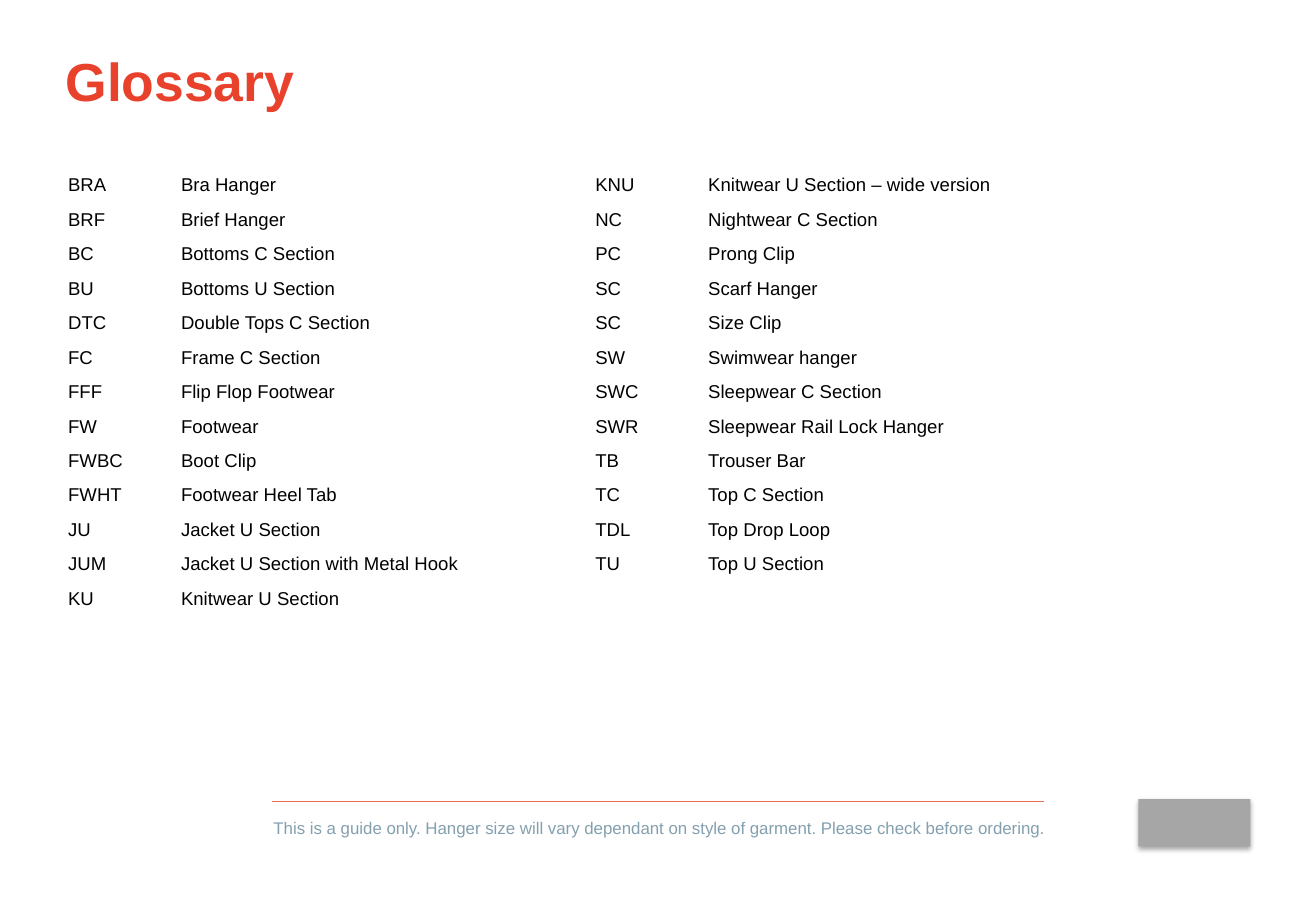
from dataclasses import dataclass

from lxml import etree
from pptx import Presentation
from pptx.dml.color import RGBColor
from pptx.enum.shapes import MSO_CONNECTOR, MSO_SHAPE
from pptx.enum.text import MSO_ANCHOR, PP_ALIGN
from pptx.oxml.ns import qn
from pptx.slide import Slide
from pptx.text.text import TextFrame, _Paragraph
from pptx.util import Cm, Pt

RECTANGLE = MSO_SHAPE.RECTANGLE
STRAIGHT = MSO_CONNECTOR.STRAIGHT
LEFT, CENTER = PP_ALIGN.LEFT, PP_ALIGN.CENTER
TOP, BOTTOM = MSO_ANCHOR.TOP, MSO_ANCHOR.BOTTOM

FONT = "Arial"
COLORS = {
    "title": "E8412C",
    "rule": "EC6C5A",
    "note": "84A0AF",
    "text": "000000",
    "block": "A6A6A6",
    "shadow": "000000",
}

TABLE_TOP = 3.53
ROW_HEIGHT = 0.69
ROW_COUNT = 13
COLUMN_WIDTHS = (2.36, 8.15)


@dataclass(frozen=True)
class GlossaryTable:
    left: float
    entries: tuple[tuple[str, str], ...]


GLOSSARY = (
    GlossaryTable(1.17, (
        ("BRA", "Bra Hanger"),
        ("BRF", "Brief Hanger"),
        ("BC", "Bottoms C Section"),
        ("BU", "Bottoms U Section"),
        ("DTC", "Double Tops C Section"),
        ("FC", "Frame C Section"),
        ("FFF", "Flip Flop Footwear"),
        ("FW", "Footwear"),
        ("FWBC", "Boot Clip"),
        ("FWHT", "Footwear Heel Tab"),
        ("JU", "Jacket U Section"),
        ("JUM", "Jacket U Section with Metal Hook"),
        ("KU", "Knitwear U Section"),
    )),
    GlossaryTable(12.19, (
        ("KNU", "Knitwear U Section – wide version"),
        ("NC", "Nightwear C Section"),
        ("PC", "Prong Clip"),
        ("SC", "Scarf Hanger"),
        ("SC", "Size Clip"),
        ("SW", "Swimwear hanger"),
        ("SWC", "Sleepwear C Section"),
        ("SWR", "Sleepwear Rail Lock Hanger"),
        ("TB", "Trouser Bar"),
        ("TC", "Top C Section"),
        ("TDL", "Top Drop Loop"),
        ("TU", "Top U Section"),
    )),
)


def format_runs(para: _Paragraph, size: float, color: str, bold: bool = False) -> None:
    for span in para.runs:
        span.font.name = FONT
        span.font.size = Pt(size)
        span.font.bold = bold
        span.font.color.rgb = RGBColor.from_string(COLORS[color])


def set_line_box(frame: TextFrame, text: str, anchor: MSO_ANCHOR,
                 align: PP_ALIGN) -> _Paragraph:
    """Fill a frame that has no side margins with a single paragraph."""
    frame.text = text
    frame.word_wrap = True
    frame.margin_left = frame.margin_right = 0
    frame.vertical_anchor = anchor
    para = frame.paragraphs[0]
    para.alignment = align
    return para


def add_title(page: Slide) -> None:
    title = page.shapes.title
    title.left, title.top, title.width, title.height = Cm(1.37), Cm(0.84), Cm(24.77), Cm(1.63)
    para = set_line_box(title.text_frame, "Glossary", BOTTOM, LEFT)
    format_runs(para, 31.7, "title", bold=True)


def add_glossary_table(page: Slide, glossary: GlossaryTable) -> None:
    frame = page.shapes.add_table(
        ROW_COUNT, len(COLUMN_WIDTHS), Cm(glossary.left), Cm(TABLE_TOP),
        Cm(sum(COLUMN_WIDTHS)), Cm(ROW_HEIGHT * ROW_COUNT))
    table = frame.table
    table.horz_banding = False
    for column, width in zip(table.columns, COLUMN_WIDTHS):
        column.width = Cm(width)
    for cell in table.iter_cells():
        cell.fill.background()
    for row, entry in zip(table.rows, glossary.entries):
        for cell, text in zip(row.cells, entry):
            cell.text_frame.text = text
            format_runs(cell.text_frame.paragraphs[0], 11, "text")


def add_footer(page: Slide) -> None:
    rule = page.shapes.add_connector(STRAIGHT, Cm(5.69), Cm(16.76), Cm(21.82), Cm(16.76))
    rule.line.color.rgb = RGBColor.from_string(COLORS["rule"])
    rule.line.width = Pt(0.75)
    etree.SubElement(rule._element.spPr, qn("a:effectLst"))

    note = page.shapes.add_textbox(Cm(5.54), Cm(16.97), Cm(16.46), Cm(0.69))
    text = ("This is a guide only. Hanger size will vary dependant on style of garment. "
            "Please check before ordering.")
    format_runs(set_line_box(note.text_frame, text, TOP, CENTER), 10, "note")


def add_corner_block(page: Slide) -> None:
    block = page.shapes.add_shape(RECTANGLE, Cm(23.8), Cm(16.71), Cm(2.34), Cm(0.99))
    block.fill.solid()
    block.fill.fore_color.rgb = RGBColor.from_string(COLORS["block"])
    block.line.fill.background()
    block.shadow.inherit = False
    effects = block._element.spPr.find(qn("a:effectLst"))
    shadow = etree.SubElement(
        effects, qn("a:outerShdw"), blurRad=str(Pt(3.1)), dist=str(Pt(1.8)),
        dir="5400000", rotWithShape="0")
    color = etree.SubElement(shadow, qn("a:srgbClr"), val=COLORS["shadow"])
    etree.SubElement(color, qn("a:alpha"), val="35000")


def main() -> None:
    deck = Presentation()
    deck.slide_width, deck.slide_height = Cm(27.51), Cm(19.05)
    page = deck.slides.add_slide(deck.slide_layouts.get_by_name("Title Only"))
    add_corner_block(page)
    add_footer(page)
    add_title(page)
    for glossary in GLOSSARY:
        add_glossary_table(page, glossary)
    deck.save("out.pptx")


if __name__ == "__main__":
    main()
